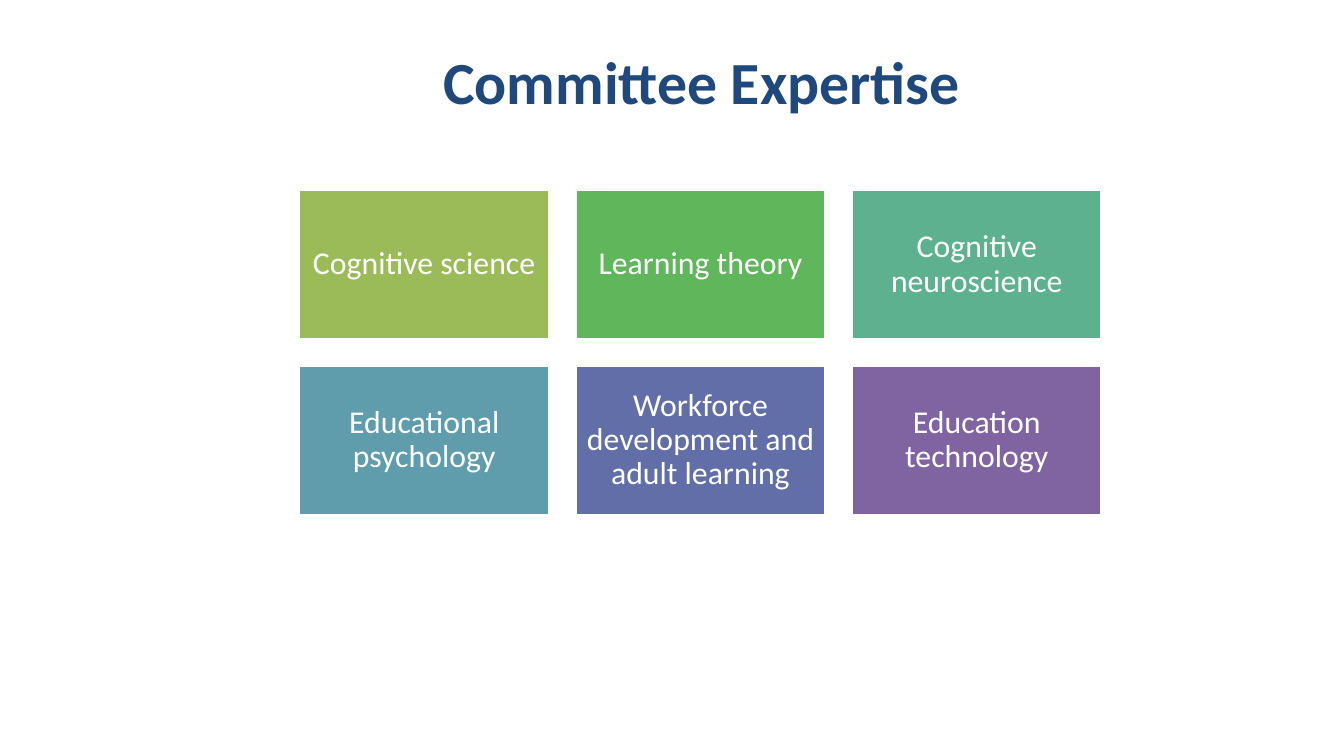
from pptx import Presentation
from pptx import util as u
from pptx.dml import color
from pptx.enum import shapes, text

COLORS = {
    "title": "1F497D",
    "white": "FFFFFF",
    "olive": "9BBB59",
    "green": "5FB65B",
    "jade": "5DB18E",
    "teal": "5F9DAC",
    "indigo": "626EA7",
    "purple": "8064A2",
}
FIELDS = [
    ("Cognitive science", "olive"),
    ("Learning theory", "green"),
    ("Cognitive neuroscience", "jade"),
    ("Educational psychology", "teal"),
    ("Workforce development and adult learning", "indigo"),
    ("Education technology", "purple"),
]
COLUMNS = 3
GRID_LEFT, GRID_TOP = 160, 101.4
TILE_WIDTH, TILE_HEIGHT = 134.6, 80.8
GAP = 13.4


def rgb(name):
    return color.RGBColor.from_string(COLORS[name])


def write(frame, words, size, tint, bold=False, align=None, spacing=None, wrap=True):
    frame.word_wrap = wrap
    paragraph = frame.paragraphs[0]
    paragraph.alignment = align
    paragraph.line_spacing = spacing
    run = paragraph.add_run()
    run.text = words
    run.font.name = "Calibri"
    run.font.size = u.Pt(size)
    run.font.bold = bold
    run.font.color.rgb = rgb(tint)


def add_title(slide, words):
    title = slide.shapes.add_textbox(u.Pt(230.4), u.Pt(20.2), u.Pt(295.2), u.Pt(46))
    title.text_frame.auto_size = text.MSO_AUTO_SIZE.SHAPE_TO_FIT_TEXT
    write(title.text_frame, words, 32, "title", bold=True, wrap=False)


def add_tile(slide, left, top, words, fill):
    tile = slide.shapes.add_shape(
        shapes.MSO_SHAPE.RECTANGLE,
        u.Pt(left), u.Pt(top), u.Pt(TILE_WIDTH), u.Pt(TILE_HEIGHT),
    )
    tile.shadow.inherit = False
    tile.fill.solid()
    tile.fill.fore_color.rgb = rgb(fill)
    tile.line.color.rgb = rgb("white")
    tile.line.width = u.Pt(2)
    frame = tile.text_frame
    frame.margin_left = frame.margin_right = u.Pt(5)
    frame.margin_top = frame.margin_bottom = u.Pt(5)
    frame.vertical_anchor = text.MSO_ANCHOR.MIDDLE
    write(frame, words, 17, "white", align=text.PP_ALIGN.CENTER, spacing=0.9)


def main():
    deck = Presentation()
    deck.slide_width, deck.slide_height = u.Pt(720), u.Pt(405)
    slide = deck.slides.add_slide(deck.slide_layouts[6])
    add_title(slide, "Committee Expertise")
    for index, (field, fill) in enumerate(FIELDS):
        row, column = divmod(index, COLUMNS)
        left = GRID_LEFT + column * (TILE_WIDTH + GAP)
        top = GRID_TOP + row * (TILE_HEIGHT + GAP)
        add_tile(slide, left, top, field, fill)
    deck.save("out.pptx")


if __name__ == "__main__":
    main()
